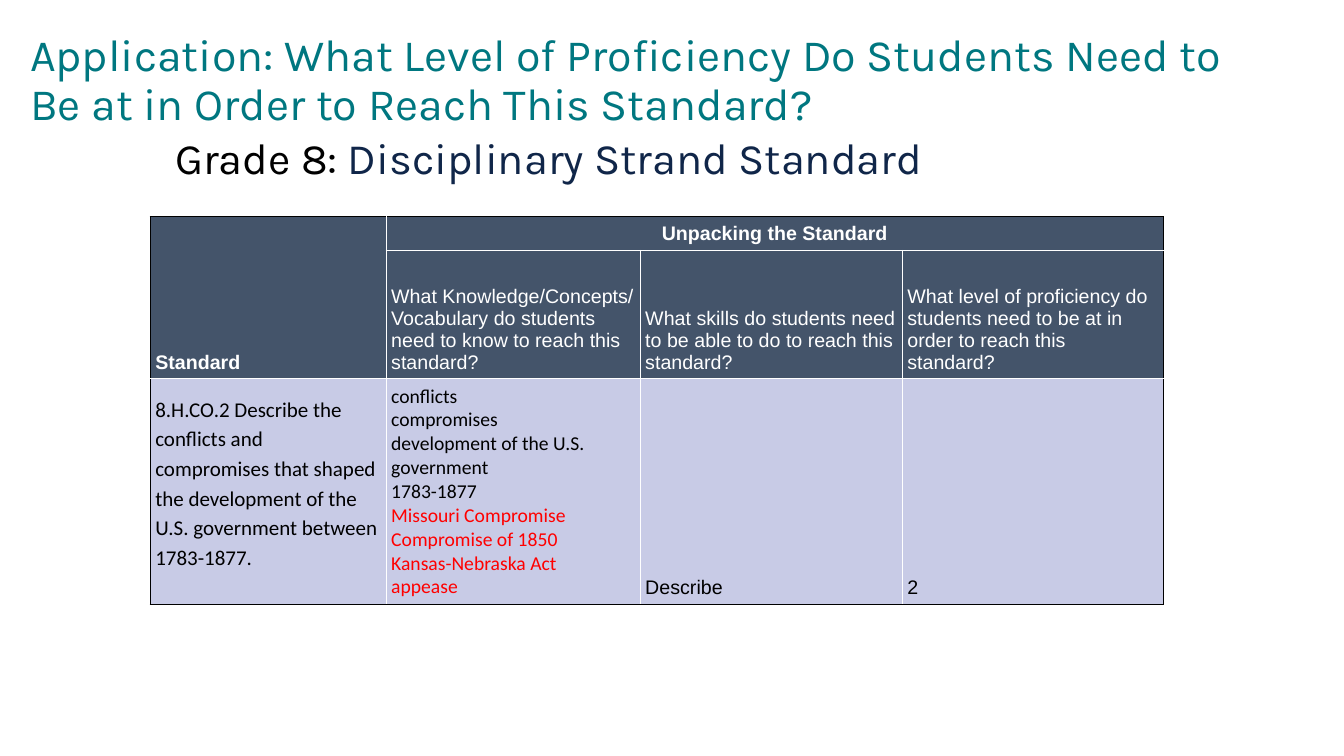
from lxml import etree
from pptx import Presentation
from pptx.dml.color import RGBColor
from pptx.enum.text import MSO_ANCHOR, PP_ALIGN
from pptx.oxml.ns import qn
from pptx.util import Pt

EMU_PER_PX = 9144  # 100 px to the inch
BOTTOM, MIDDLE, TOP = MSO_ANCHOR.BOTTOM, MSO_ANCHOR.MIDDLE, MSO_ANCHOR.TOP
CENTER, LEFT = PP_ALIGN.CENTER, PP_ALIGN.LEFT

COLORS = {
    "teal": "007780", "navy": "102649", "black": "000000", "white": "FFFFFF",
    "header": "44546A", "body": "C8CBE6", "red": "FF0000",
}

COLUMN_WIDTHS = [234, 252, 260, 259]
ROW_HEIGHTS = [33, 127, 224]
CELL_MARGIN = 5

HEADING = {"size": 14, "name": "Arial", "color": "white", "bold": True}
QUESTION = {**HEADING, "bold": False}
ANSWER = {**QUESTION, "color": "black"}
STANDARD = {**ANSWER, "name": "Calibri", "size": 15}
CONCEPT = {**STANDARD, "size": 14}
ADDED_CONCEPT = {**CONCEPT, "color": "red"}

CONCEPTS = ["conflicts", "compromises", "development of the U.S. government", "1783-1877"]
ADDED_CONCEPTS = ["Missouri Compromise", "Compromise of 1850", "Kansas-Nebraska Act", "appease"]

# (row, column): paragraphs, each a list of (text, format) runs
CELL_TEXTS = {
    (0, 0): [[("Standard", HEADING)]],
    (0, 1): [[("Unpacking the Standard", HEADING)]],
    (1, 1): [[("What Knowledge/Concepts/ Vocabulary do students need to know "
               "to reach this standard?", QUESTION)]],
    (1, 2): [[("What skills do students need to be able to do to reach this standard?", QUESTION)]],
    (1, 3): [[("What level of proficiency do students need to be at in order "
               "to reach this standard?", QUESTION)]],
    (2, 0): [[("8.H.CO.2 Describe the conflicts and compromises that shaped the development "
               "of the U.S. government between 1783-1877.", STANDARD)]],
    (2, 1): [[(concept, CONCEPT)] for concept in CONCEPTS]
            + [[(concept, ADDED_CONCEPT)] for concept in ADDED_CONCEPTS],
    (2, 2): [[("Describe", ANSWER)]],
    (2, 3): [[("2", ANSWER)]],
}


def px(length):
    return length * EMU_PER_PX


def rgb(name):
    return RGBColor.from_string(COLORS[name])


def write_paragraphs(frame, paragraphs, line_spacing=1.0, align=LEFT):
    for index, runs in enumerate(paragraphs):
        paragraph = frame.add_paragraph() if index else frame.paragraphs[0]
        paragraph.line_spacing = line_spacing
        paragraph.alignment = align
        for text, style in runs:
            run = paragraph.add_run()
            run.text = text
            for key, value in style.items():
                if key == "color":
                    run.font.color.rgb = rgb(value)
                else:
                    setattr(run.font, key, Pt(value) if key == "size" else value)


def add_heading(slide, box, runs):
    frame = slide.shapes.add_textbox(*map(px, box)).text_frame
    frame.word_wrap = True
    frame.vertical_anchor = TOP
    write_paragraphs(frame, [runs], line_spacing=0.9)


def set_borders(cell, row, column):
    """Black along the outside of the table, white between cells."""
    outer_sides = {
        "L": column == 0,
        "R": column + cell.span_width == len(COLUMN_WIDTHS),
        "T": row == 0,
        "B": row + cell.span_height == len(ROW_HEIGHTS),
    }
    properties = cell._tc.get_or_add_tcPr()
    for index, (side, is_outer) in enumerate(outer_sides.items()):
        line = etree.Element(qn(f"a:ln{side}"), w=str(Pt(1)))
        fill = etree.SubElement(line, qn("a:solidFill"))
        etree.SubElement(fill, qn("a:srgbClr"), val=COLORS["black" if is_outer else "white"])
        properties.insert(index, line)


def add_standard_table(slide, left, top):
    table = slide.shapes.add_table(
        len(ROW_HEIGHTS), len(COLUMN_WIDTHS), px(left), px(top),
        px(sum(COLUMN_WIDTHS)), px(sum(ROW_HEIGHTS))).table
    table.horz_banding = False
    for column, width in zip(table.columns, COLUMN_WIDTHS):
        column.width = px(width)
    for row, height in zip(table.rows, ROW_HEIGHTS):
        row.height = px(height)
    table.cell(0, 0).merge(table.cell(1, 0))
    table.cell(0, 1).merge(table.cell(0, 3))

    for row in range(len(ROW_HEIGHTS)):
        for column in range(len(COLUMN_WIDTHS)):
            cell = table.cell(row, column)
            cell.fill.solid()
            cell.fill.fore_color.rgb = rgb("body" if row == 2 else "header")
            for side in ("left", "right", "top", "bottom"):
                setattr(cell, f"margin_{side}", px(CELL_MARGIN))
            set_borders(cell, row, column)
            if cell.is_spanned:
                continue
            is_banner = (row, column) == (0, 1)
            is_standard = (row, column) == (2, 0)
            cell.vertical_anchor = MIDDLE if is_banner else BOTTOM
            if is_standard:
                cell.margin_bottom = px(33)
            write_paragraphs(cell.text_frame, CELL_TEXTS[row, column],
                             line_spacing=1.15 if is_standard else 1.0,
                             align=CENTER if is_banner else LEFT)


def main():
    presentation = Presentation()
    presentation.slide_width, presentation.slide_height = px(1333), px(750)
    slide = presentation.slides.add_slide(presentation.slide_layouts[6])
    title = {"size": 32, "name": "Karla", "color": "teal"}
    grade = {"size": 31, "name": "Karla", "color": "black"}
    add_heading(slide, (20, 28, 1263, 144), [
        ("Application: What Level of Proficiency Do Students Need to Be at "
         "in Order to Reach This Standard?", title)])
    add_heading(slide, (164, 131, 1005, 512), [
        ("Grade 8: ", grade),
        ("Disciplinary Strand Standard", {**grade, "color": "navy"})])
    add_standard_table(slide, 149, 215)
    presentation.save("out.pptx")


if __name__ == "__main__":
    main()
